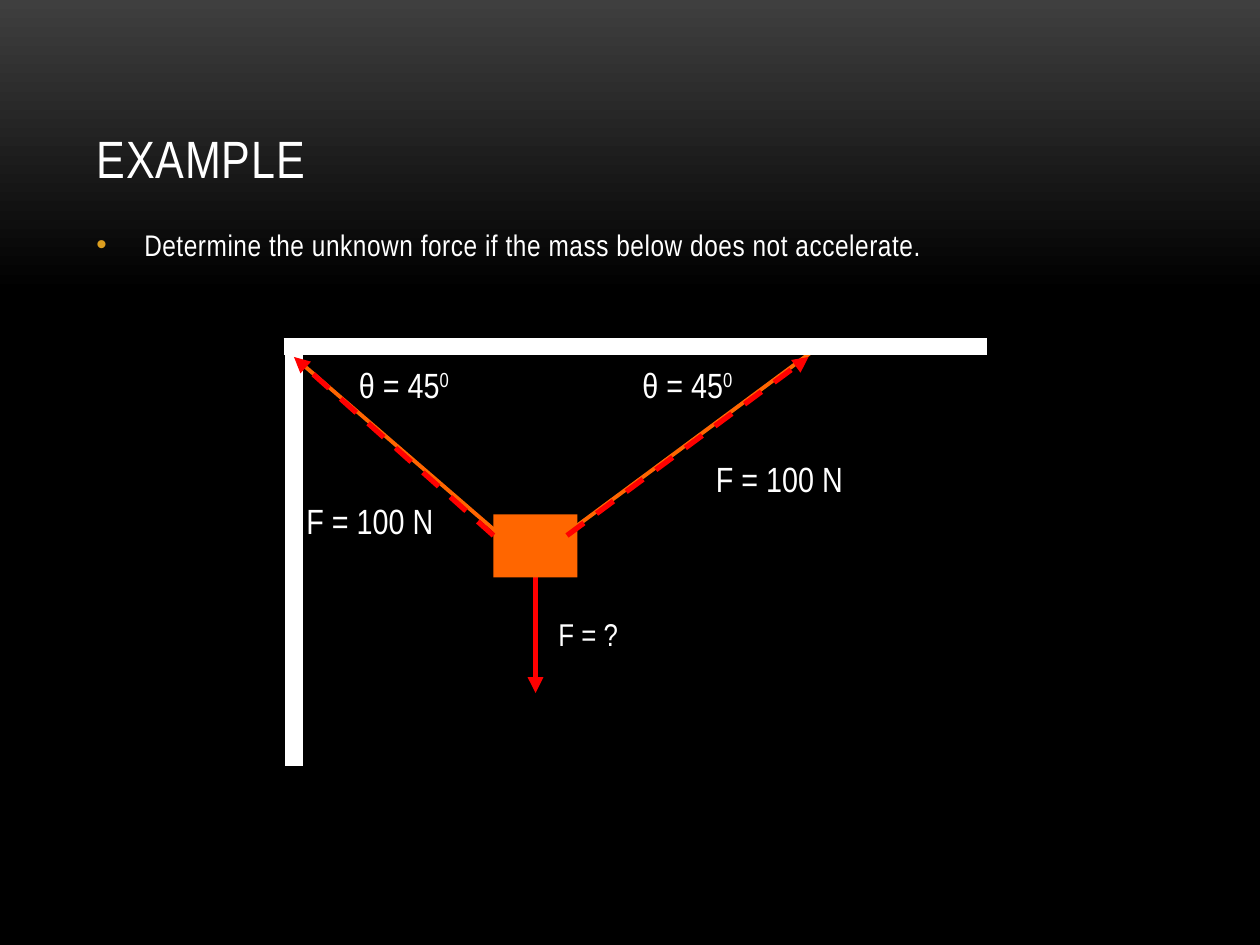
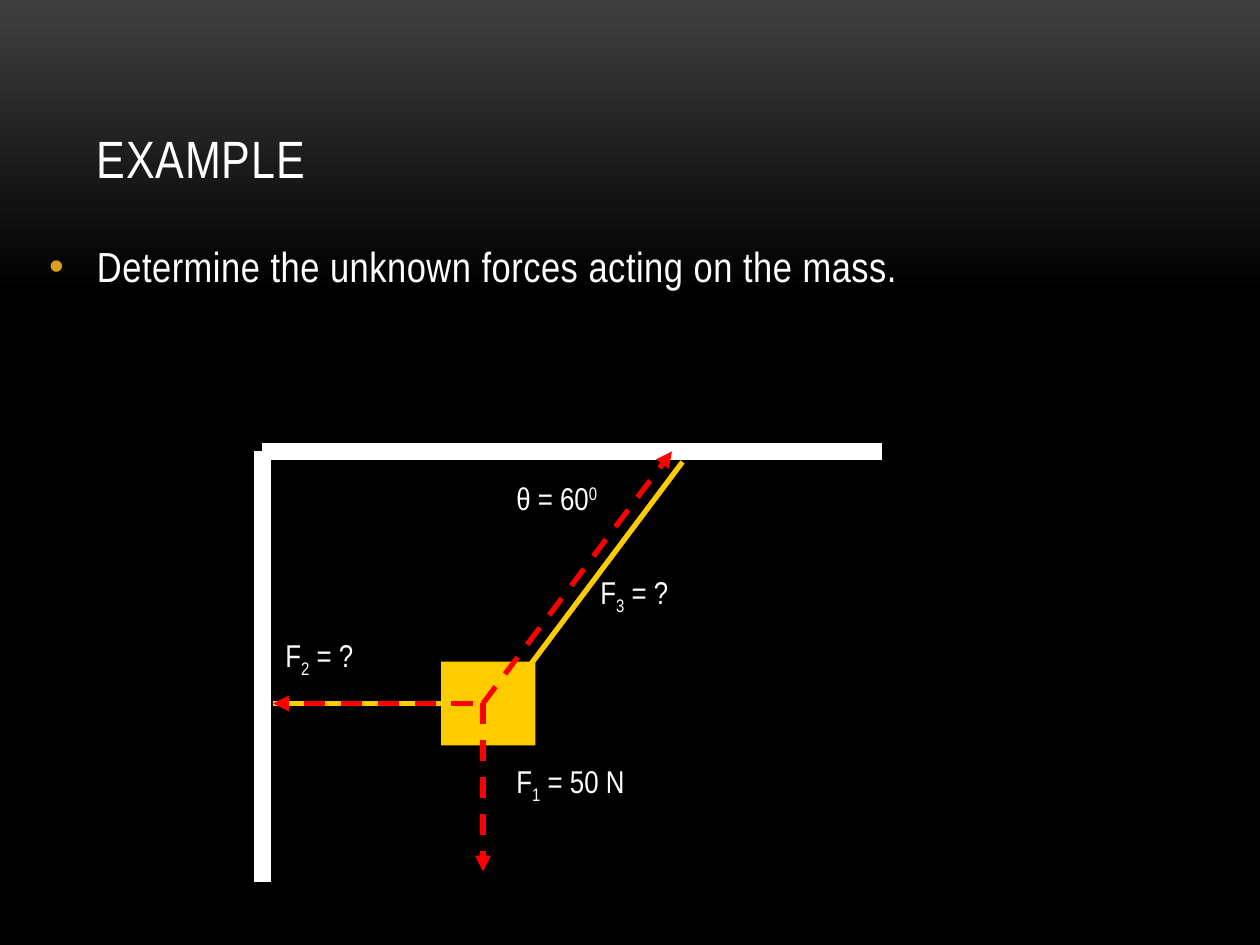
"""Build two slides on forces that hold a hanging mass in balance."""
from lxml import etree
from pptx import Presentation
from pptx import util as u
from pptx.dml.color import RGBColor
from pptx.enum import dml, shapes, text
from pptx.oxml.ns import qn

WHITE = RGBColor(0xFF, 0xFF, 0xFF)
BLACK = RGBColor(0x00, 0x00, 0x00)
GREY = RGBColor(0x3F, 0x3F, 0x3F)
RED = RGBColor(0xFF, 0x00, 0x00)
ORANGE = RGBColor(0xFF, 0x66, 0x00)
YELLOW = RGBColor(0xFF, 0xCC, 0x00)
GOLD = "DC9E1F"
FONT = "Arial Narrow"
COLUMNS, ROWS = 120, 90
WIDTH, HEIGHT = u.Inches(10), u.Inches(7.5)
TITLE_AREA = (8, 3.6, 104, 15)
SUPER, SUB = 30, -25


def grid(*cells):
    """Turn alternating columns and rows into slide lengths."""
    units = (WIDTH / COLUMNS, HEIGHT / ROWS)
    return [u.Emu(round(cell * units[i % 2])) for i, cell in enumerate(cells)]


def write(box, *parts, size, spacing=0, anchor=text.MSO_ANCHOR.TOP):
    """Fill a box with one paragraph of strings or (string, baseline) pairs."""
    frame = box.text_frame
    frame.word_wrap = True
    frame.auto_size = text.MSO_AUTO_SIZE.NONE
    frame.vertical_anchor = anchor
    para = frame.paragraphs[0]
    para.alignment = text.PP_ALIGN.LEFT
    for part in parts:
        words, baseline = (part, 0) if isinstance(part, str) else part
        span = para.add_run()
        span.text = words
        span.font.name = FONT
        span.font.size = u.Pt(size)
        span.font.color.rgb = WHITE
        properties = span.font._element
        if spacing:
            properties.set("spc", str(round(spacing * 100)))
        if baseline:
            properties.set("baseline", str(baseline * 1000))
    return para


def add_page(deck):
    """Add a slide with the shared title."""
    page = deck.slides.add_slide(deck.slide_layouts.get_by_name("Title Only"))
    title = page.shapes.title
    title.left, title.top, title.width, title.height = grid(*TITLE_AREA)
    write(title, "EXAMPLE", size=30, spacing=0.5, anchor=text.MSO_ANCHOR.BOTTOM)
    return page


def add_task(page, area, words, size):
    """Add the bulleted task sentence."""
    para = write(page.shapes.add_textbox(*grid(*area)), words, size=size, spacing=0.3)
    para.space_after = u.Pt(6)
    properties = para._p.get_or_add_pPr()
    indent = u.Inches(0.38)
    properties.set("marL", str(indent))
    properties.set("indent", str(-indent))
    colour = etree.SubElement(properties, qn("a:buClr"))
    etree.SubElement(colour, qn("a:srgbClr"), val=GOLD)
    etree.SubElement(properties, qn("a:buFont"), typeface="Arial")
    etree.SubElement(properties, qn("a:buChar"), char="•")


def add_label(page, area, *parts, size=18):
    """Add a force or angle label."""
    write(page.shapes.add_textbox(*grid(*area)), *parts, size=size)


def add_line(page, ends, colour, width):
    """Add a straight line between two grid points."""
    line = page.shapes.add_connector(shapes.MSO_CONNECTOR.STRAIGHT, *grid(*ends))
    line.line.color.rgb = colour
    line.line.width = u.Pt(width)
    etree.SubElement(line._element.spPr, qn("a:effectLst"))
    return line


def add_beam(page, *ends):
    """Add a thick white wall or ceiling."""
    add_line(page, ends, WHITE, 10)


def add_force(page, *ends, dashed=True):
    """Add a red force arrow."""
    arrow = add_line(page, ends, RED, 3)
    if dashed:
        arrow.line.dash_style = dml.MSO_LINE.DASH
    etree.SubElement(arrow.line._get_or_add_ln(), qn("a:tailEnd"), type="triangle")


def add_mass(page, area, colour):
    """Add the hanging mass."""
    mass = page.shapes.add_shape(shapes.MSO_SHAPE.RECTANGLE, *grid(*area))
    mass.shadow.inherit = False
    mass.fill.solid()
    mass.fill.fore_color.rgb = colour
    mass.line.fill.background()


def paint_background(deck):
    """Fade the shared background from grey to black."""
    fill = deck.slide_master.background.fill
    fill.gradient()
    fill.gradient_angle = 270
    for stop, colour, position in zip(fill.gradient_stops, (GREY, BLACK), (0, 0.31)):
        stop.color.rgb = colour
        stop.position = position


def build_two_ropes(deck):
    """Show a mass on two ropes with one unknown force."""
    page = add_page(deck)
    add_task(page, (8, 21, 104, 54),
             "Determine the unknown force if the mass below does not accelerate.", 17)
    add_force(page, 51, 53, 51, 66, dashed=False)
    add_label(page, (52, 58, 28, 6), "F = ?")
    for ends in ((28, 34, 50, 53), (78, 33, 51, 53)):
        add_line(page, ends, ORANGE, 2.25)
    add_beam(page, 27, 33, 94, 33)
    add_beam(page, 28, 33, 28, 73)
    add_mass(page, (47, 49, 8, 6), ORANGE)
    for column, width in ((33, 30), (60, 15)):
        add_label(page, (column, 34, width, 5), "θ = 45", ("0", SUPER), size=20)
    add_force(page, 54, 51, 77, 34)
    add_force(page, 47, 51, 28, 34)
    for column, row in ((28, 47), (67, 43)):
        add_label(page, (column, row, 22, 5), "F = 100 N", size=20)


def build_three_forces(deck):
    """Show a mass held by a wall rope and a ceiling rope."""
    page = add_page(deck)
    add_task(page, (3.5, 22.3, 102, 15.2),
             "Determine the unknown forces acting on the mass.", 24)
    add_beam(page, 25, 43, 25, 84)
    add_beam(page, 25, 43, 84, 43)
    add_line(page, (65, 44, 50, 64), YELLOW, 3)
    add_mass(page, (42, 63, 9, 8), YELLOW)
    add_line(page, (26, 67, 43, 67), YELLOW, 3)
    add_label(page, (48, 45, 18, 6), "θ = 60", ("0", SUPER))
    add_force(page, 46, 67, 46, 83)
    add_force(page, 45, 67, 26, 67)
    add_force(page, 46, 67, 64, 43)
    for area, number, value in (
        ((48, 72, 34, 6), "1", " = 50 N"),
        ((26, 60, 20, 6), "2", " = ?"),
        ((56, 54, 19, 6), "3", " = ?"),
    ):
        add_label(page, area, "F", (number, SUB), value)


def main():
    """Build and save the deck."""
    deck = Presentation()
    deck.slide_width, deck.slide_height = WIDTH, HEIGHT
    paint_background(deck)
    build_two_ropes(deck)
    build_three_forces(deck)
    deck.save("out.pptx")


if __name__ == "__main__":
    main()
